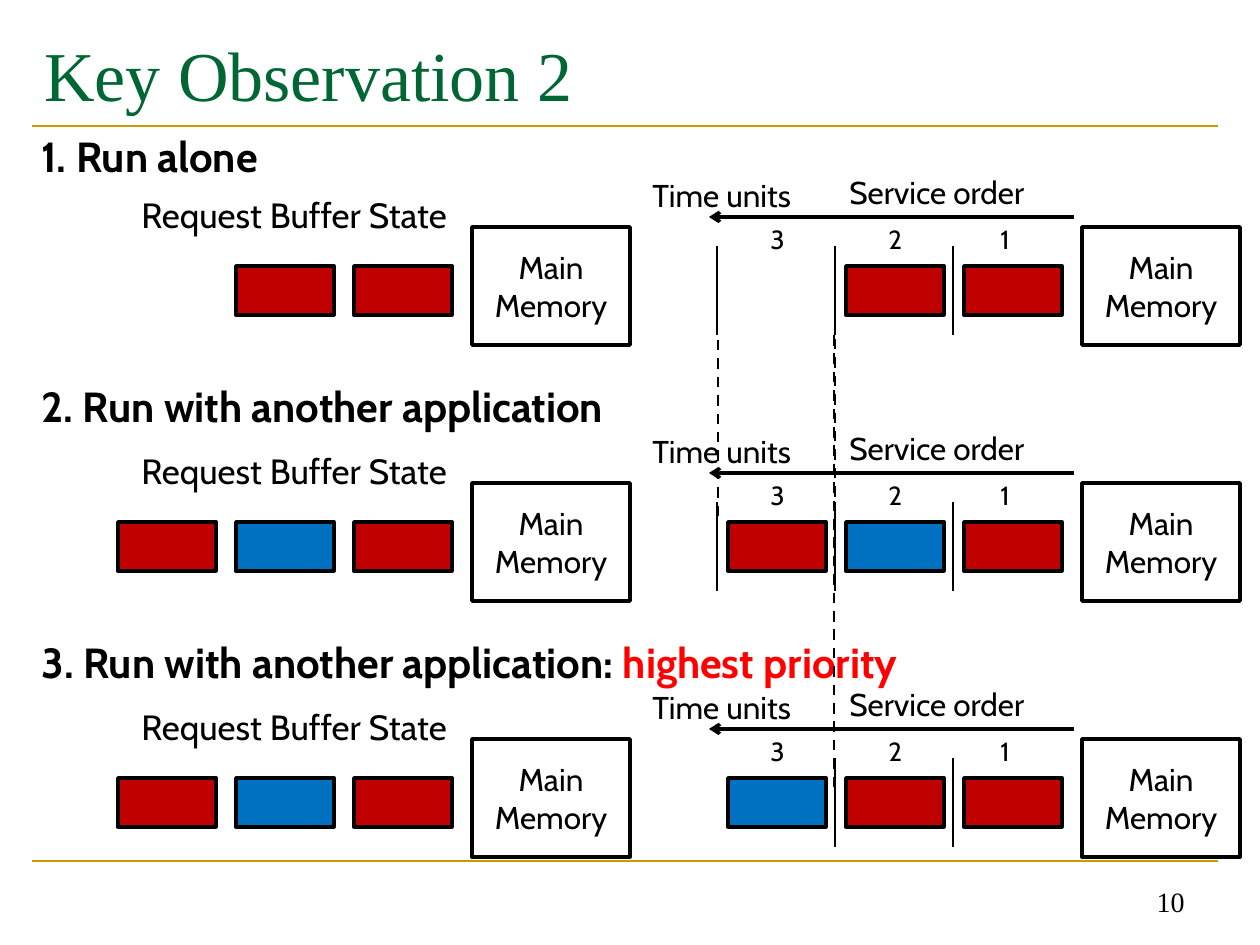
from collections import namedtuple

from lxml import etree
from pptx import Presentation
from pptx.dml.color import RGBColor
from pptx.enum.dml import MSO_LINE
from pptx.enum.shapes import MSO_CONNECTOR, MSO_SHAPE
from pptx.enum.text import MSO_ANCHOR, PP_ALIGN
from pptx.oxml.ns import qn
from pptx.util import Pt

PX = 914400 / 126
STRAIGHT, RECTANGLE, DASH = MSO_CONNECTOR.STRAIGHT, MSO_SHAPE.RECTANGLE, MSO_LINE.DASH
TOP, MIDDLE, BOTTOM = MSO_ANCHOR.TOP, MSO_ANCHOR.MIDDLE, MSO_ANCHOR.BOTTOM
LEFT, CENTER, RIGHT = PP_ALIGN.LEFT, PP_ALIGN.CENTER, PP_ALIGN.RIGHT

BLACK = RGBColor(0x00, 0x00, 0x00)
GREEN = RGBColor(0x00, 0x66, 0x33)
GOLD = RGBColor(0xCC, 0x99, 0x00)
CRIMSON = RGBColor(0xC0, 0x00, 0x00)
BLUE = RGBColor(0x00, 0x70, 0xC0)
BRIGHT_RED = RGBColor(0xFF, 0x00, 0x00)
SANS, SERIF = "Cabin", "Times New Roman"

SLOT_PITCH = 118
ROW_TOP, ROW_PITCH = 118, 256
MEMORY_WIDTH = 158

Box = namedtuple("Box", "x y w h")
Scenario = namedtuple("Scenario", "heading heading_y buffer service separators")

# Requests are listed from the memory outwards, right to left.
SCENARIOS = [
    Scenario([("1. Run alone", BLACK)], 6, [CRIMSON, CRIMSON], [CRIMSON, CRIMSON], 3),
    Scenario([("2. Run with another application", BLACK)], 0,
             [CRIMSON, BLUE, CRIMSON], [CRIMSON, BLUE, CRIMSON], 3),
    Scenario([("3. Run with another application: ", BLACK), ("highest priority", BRIGHT_RED)], 0,
             [CRIMSON, BLUE, CRIMSON], [CRIMSON, CRIMSON, BLUE], 2),
]


def emu(*lengths):
    return [round(length * PX) for length in lengths]


def write(shape, spans, size, font=SANS, bold=False, align=LEFT, anchor=TOP):
    """Fill a shape with one paragraph of (text, colour) spans."""
    frame = shape.text_frame
    frame.word_wrap = True
    frame.vertical_anchor = anchor
    para = frame.paragraphs[0]
    para.alignment = align
    for text, color in spans:
        span = para.add_run()
        span.text = text
        for name, value in {"size": Pt(size), "name": font, "bold": bold}.items():
            setattr(span.font, name, value)
        span.font.color.rgb = color


def add_label(page, box, text, size, color=BLACK, **format_values):
    write(page.shapes.add_textbox(*emu(*box)), [(text, color)], size, **format_values)


def add_line(page, start, end, color=BLACK, width=1.5, dash=None, arrow=False):
    line = page.shapes.add_connector(STRAIGHT, *emu(*start, *end))
    line.line.color.rgb = color
    line.line.width = Pt(width)
    if dash:
        line.line.dash_style = dash
    if arrow:
        etree.SubElement(line.line._get_or_add_ln(), qn("a:tailEnd"), type="arrow")
    etree.SubElement(line._element.spPr, qn("a:effectLst"))


def add_block(page, box, fill=None):
    block = page.shapes.add_shape(RECTANGLE, *emu(*box))
    block.shadow.inherit = False
    if fill is None:
        block.fill.background()
    else:
        block.fill.solid()
        block.fill.fore_color.rgb = fill
    block.line.color.rgb = BLACK
    block.line.width = Pt(2)
    return block


def add_requests_and_memory(page, box, requests):
    """Put the memory at the right end of the box and the requests to its left."""
    memory_x = box.x + box.w - MEMORY_WIDTH
    memory = add_block(page, Box(memory_x, box.y + 109, MEMORY_WIDTH, 118))
    write(memory, [("Main Memory", BLACK)], 18, align=CENTER, anchor=MIDDLE)
    for index, color in enumerate(requests, start=1):
        add_block(page, Box(memory_x - index * SLOT_PITCH, box.y + 148, 98, 49), color)


def add_buffer_state(page, box, requests):
    add_label(page, Box(box.x + 11, box.y + 69, 344, 56), "Request Buffer State", 20)
    add_requests_and_memory(page, box, requests)


def add_service_order(page, box, requests, separators):
    add_requests_and_memory(page, box, requests)
    add_label(page, Box(box.x, box.y + 52, 246, 50), "Time units", 18)
    add_label(page, Box(box.x + 197, box.y + 49, 217, 50), "Service order", 18)
    add_line(page, (box.x + 434, box.y + 99), (box.x + 69, box.y + 99), width=2, arrow=True)
    for index in range(separators):
        x = box.x + 313 - index * SLOT_PITCH
        add_line(page, (x, box.y + 128), (x, box.y + 217))
    for number, x in enumerate((348, 236, 118), start=1):
        add_label(page, Box(box.x + x, box.y + 99, 29, 44), str(number), 15)


def add_scenario(page, box, scenario):
    heading = page.shapes.add_textbox(*emu(box.x, box.y + scenario.heading_y, 1092, 63))
    write(heading, scenario.heading, 24, bold=True)
    add_buffer_state(page, Box(box.x + 89, box.y, 512, box.h), scenario.buffer)
    add_service_order(page, Box(box.x + 611, box.y, 600, box.h),
                      scenario.service, scenario.separators)


def add_time_guides(page, box):
    """Dashed lines that carry time boundaries from one scenario to the next."""
    for x, top, bottom in ((117, 4, 180), (0, 5, 183), (116, 0, 453)):
        add_line(page, (box.x + x, box.y + top), (box.x + x, box.y + bottom), dash=DASH)


def add_slide_frame(page, box):
    for y in (861, 126):
        add_line(page, (box.x + 32, box.y + y), (box.x + 1218, box.y + y), GOLD)
    add_label(page, Box(box.x + 32, box.y + 21, 1187, 105), "Key Observation 2", 40, GREEN,
              font=SERIF, anchor=MIDDLE)
    add_label(page, Box(box.x + 903, box.y + 861, 294, 63), "10", 16,
              font=SERIF, align=RIGHT, anchor=BOTTOM)


def main():
    deck = Presentation()
    deck.slide_width, deck.slide_height = emu(1260, 945)
    page = deck.slides.add_slide(deck.slide_layouts[6])
    add_slide_frame(page, Box(0, 0, 1260, 945))
    for index, scenario in enumerate(SCENARIOS):
        add_scenario(page, Box(29, ROW_TOP + index * ROW_PITCH, 1211, ROW_PITCH), scenario)
    add_time_guides(page, Box(718, 335, 117, 453))
    deck.save("out.pptx")


if __name__ == "__main__":
    main()
